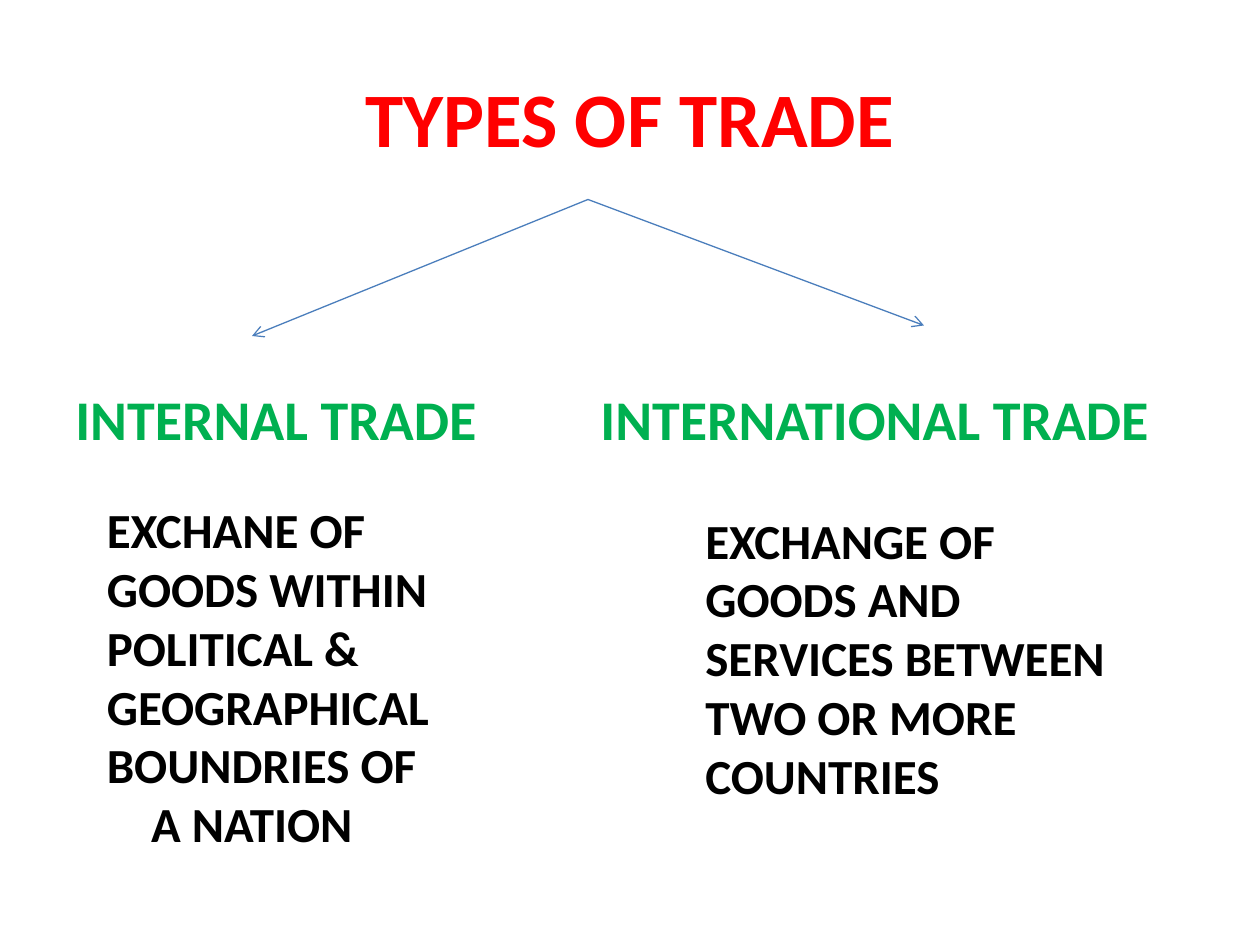
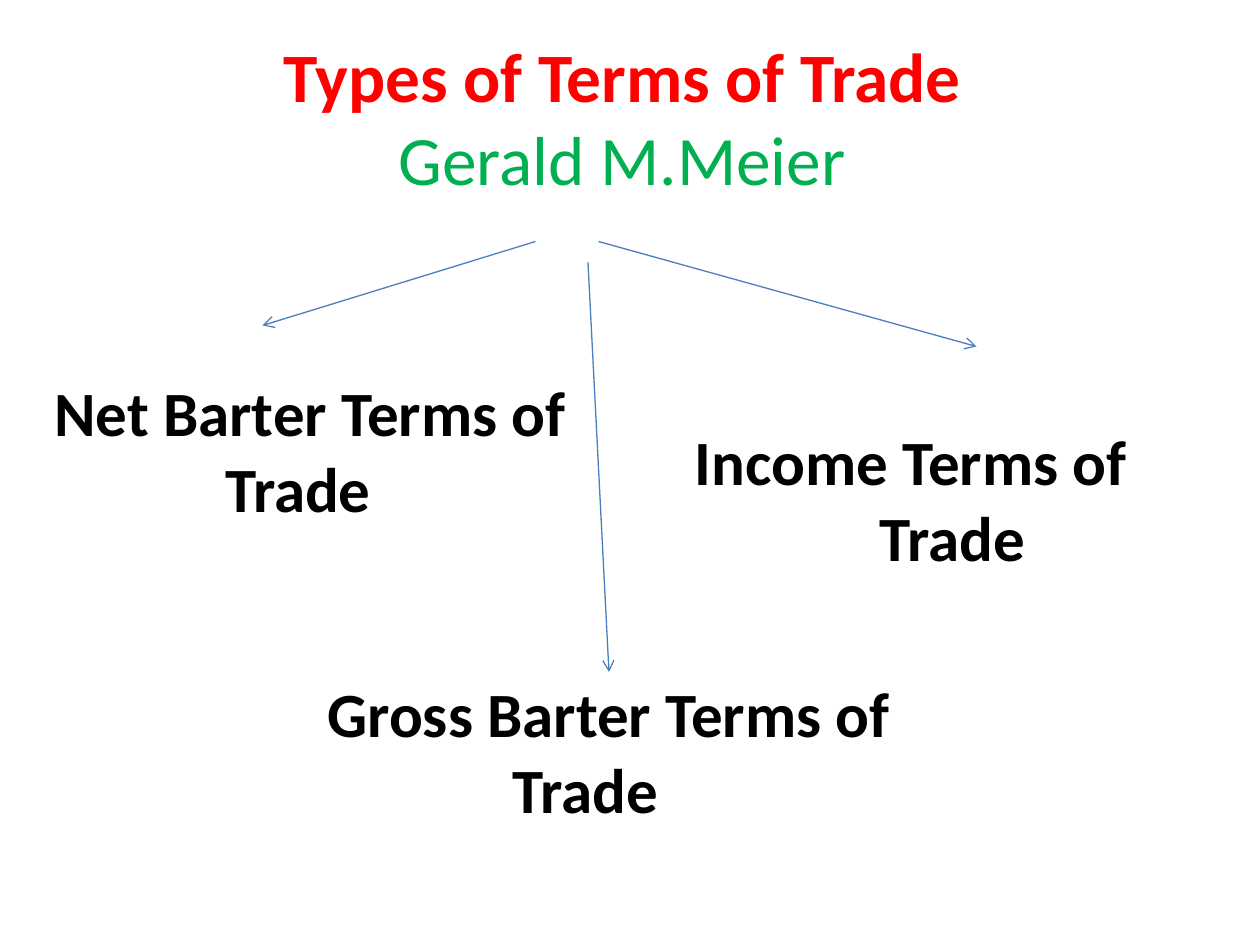
"""Build two slides on the types of trade and of terms of trade."""
import pptx
import pptx.dml.color
import pptx.enum.shapes
import pptx.enum.text
import pptx.oxml.ns
import pptx.util
from lxml import etree

Pt = pptx.util.Pt
RED, GREEN, BLACK, BLUE = "FF0000", "00B050", "000000", "4B7EBC"
TITLE_BOX = (36, 21.6, 648, 90)


def color(hex_string):
    """Return the colour of a hex string."""
    return pptx.dml.color.RGBColor.from_string(hex_string)


def apply(obj, formats):
    """Set each attribute in a dict of format values."""
    for name, value in formats.items():
        setattr(obj, name, value)


def add_run(p, text, size, hex_string, bold=True):
    """Add a formatted run to a paragraph."""
    r = p.add_run()
    r.text = text
    apply(r.font, {"name": "Calibri", "size": Pt(size), "bold": bold})
    r.font.color.rgb = color(hex_string)


def add_title_slide(prs, size, *lines):
    """Add a slide whose title holds (text, colour, bold) lines."""
    s = prs.slides.add_slide(prs.slide_layouts[5])
    sp = s.shapes.title
    apply(sp, dict(zip(("left", "top", "width", "height"), map(Pt, TITLE_BOX))))
    tf = sp.text_frame
    apply(tf, {"auto_size": pptx.enum.text.MSO_AUTO_SIZE.NONE, "word_wrap": True,
               "vertical_anchor": pptx.enum.text.MSO_ANCHOR.MIDDLE})
    p = tf.paragraphs[0]
    p.alignment = pptx.enum.text.PP_ALIGN.CENTER
    for i, (text, hex_string, bold) in enumerate(lines):
        if i:
            p.add_line_break()
        add_run(p, text, size, hex_string, bold)
    return s


def add_text(s, box, size, hex_string, *lines, indent=0, top=3.6):
    """Add a bold text box, with lines after the first indented."""
    tf = s.shapes.add_textbox(*map(Pt, box)).text_frame
    apply(tf, {"word_wrap": True, "margin_top": Pt(top),
               "auto_size": pptx.enum.text.MSO_AUTO_SIZE.SHAPE_TO_FIT_TEXT})
    for i, text in enumerate(lines):
        p = tf.add_paragraph() if i else tf.paragraphs[0]
        add_run(p, text, size, hex_string)
        if i:
            p._p.get_or_add_pPr().set("indent", str(Pt(indent)))


def add_arrow(s, *ends):
    """Add a thin arrow from one point to another."""
    sp = s.shapes.add_connector(pptx.enum.shapes.MSO_CONNECTOR.STRAIGHT, *map(Pt, ends))
    sp.line.width = Pt(0.75)
    sp.line.color.rgb = color(BLUE)
    qn = pptx.oxml.ns.qn
    etree.SubElement(sp.line._get_or_add_ln(), qn("a:tailEnd"), type="arrow")
    etree.SubElement(sp._element.spPr, qn("a:effectLst"))


def add_trade_types(prs):
    """Add the slide on internal and international trade."""
    s = add_title_slide(prs, 44, ("TYPES OF TRADE", RED, True))
    for x, y in ((144, 192), (528, 186)):
        add_arrow(s, 336, 114, x, y)
    add_text(s, (36, 216, 258, 46), 32, GREEN, "INTERNAL TRADE")
    add_text(s, (336, 216, 384, 46), 32, GREEN, "INTERNATIONAL TRADE")
    add_text(s, (54, 282, 252, 211), 28, BLACK,
             "EXCHANE OF GOODS WITHIN POLITICAL & GEOGRAPHICAL BOUNDRIES OF",
             "A NATION", indent=25.3)
    add_text(s, (396, 288, 246, 177), 28, BLACK,
             "EXCHANGE OF GOODS AND SERVICES BETWEEN TWO OR MORE COUNTRIES")


def add_terms_types(prs):
    """Add the slide on the three terms of trade."""
    s = add_title_slide(prs, 39.6, ("Types of Terms of Trade ", RED, True),
                        ("Gerald M.Meier ", GREEN, False))
    for ends in ((306, 138, 150, 186), (336, 150, 348, 384), (342, 138, 558, 198)):
        add_arrow(s, *ends)
    for kind, box, indent, top in (
            ("Net Barter", (24, 210, 312, 94.5), 97.6, 3.6),
            ("Gross Barter", (180, 360, 372, 116.5), 105.7, 25.6),
            ("Income", (390, 216, 306, 116.5), 105.7, 25.6)):
        add_text(s, box, 36, BLACK, f"{kind} Terms of", "Trade", indent=indent, top=top)


def main():
    """Build and save the presentation."""
    prs = pptx.Presentation()
    apply(prs, {"slide_width": Pt(720), "slide_height": Pt(540)})
    add_trade_types(prs)
    add_terms_types(prs)
    prs.save("out.pptx")


if __name__ == "__main__":
    main()
